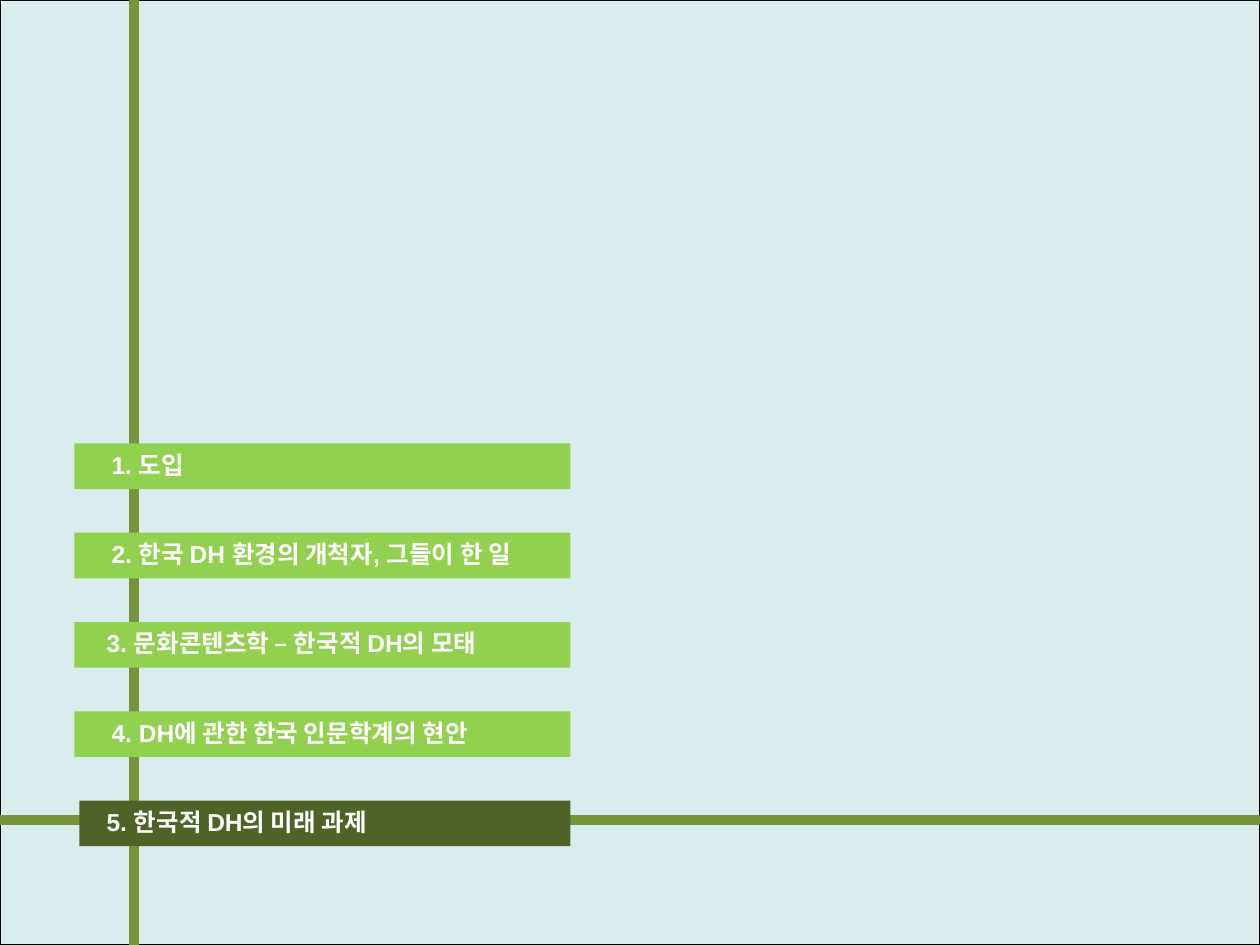
from lxml import etree
from pptx import Presentation
from pptx.dml.color import RGBColor
from pptx.enum import shapes as sh, text as tx
from pptx.oxml.ns import qn
from pptx.util import Cm, Pt

SKY = RGBColor(0xD9, 0xED, 0xEF)
BLACK = RGBColor(0, 0, 0)
OLIVE = RGBColor(0x77, 0x93, 0x3C)
LIME = RGBColor(0x92, 0xD0, 0x50)
DARK = RGBColor(0x4F, 0x62, 0x28)
WHITE = RGBColor(0xFF, 0xFF, 0xFF)

WIDE, HIGH = 25.4, 19.05
TOP, STEP = 8.94, 1.8
RIGHT = 11.5
BAR, LABEL = 0.92, 0.86

ITEMS = [
    ("1. 도입", 1.5, 2.0, LIME),
    ("2. 한국 DH 환경의 개척자, 그들이 한 일", 1.5, 2.0, LIME),
    ("3. 문화콘텐츠학 – 한국적 DH의 모태", 1.5, 1.9, LIME),
    ("4. DH에 관한 한국 인문학계의 현안", 1.5, 2.0, LIME),
    ("5. 한국적 DH의 미래 과제", 1.6, 1.9, DARK),
]


def add_rect(slide, x, y, w, h, fill, edge=None):
    rect = slide.shapes.add_shape(
        sh.MSO_SHAPE.RECTANGLE, Cm(x), Cm(y), Cm(w), Cm(h))
    rect.shadow.inherit = False
    rect.fill.solid()
    rect.fill.fore_color.rgb = fill
    if edge is None:
        rect.line.fill.background()
    else:
        rect.line.color.rgb = edge
        rect.line.width = Pt(0.75)


def add_line(slide, x1, y1, x2, y2):
    line = slide.shapes.add_connector(
        sh.MSO_CONNECTOR.STRAIGHT, Cm(x1), Cm(y1), Cm(x2), Cm(y2))
    line.line.color.rgb = OLIVE
    line.line.width = Pt(6)
    etree.SubElement(line._element.spPr, qn("a:effectLst"))


def add_label(slide, x, y, words):
    box = slide.shapes.add_textbox(Cm(x), Cm(y), Cm(RIGHT - x), Cm(LABEL))
    frame = box.text_frame
    frame.word_wrap = True
    frame.auto_size = tx.MSO_AUTO_SIZE.SHAPE_TO_FIT_TEXT
    run = frame.paragraphs[0].add_run()
    run.text = words
    run.font.name = "Arial"
    run.font.size = Pt(14)
    run.font.bold = True
    run.font.color.rgb = WHITE


def main():
    deck = Presentation()
    deck.slide_width, deck.slide_height = Cm(WIDE), Cm(HIGH)
    slide = deck.slides.add_slide(deck.slide_layouts[6])
    add_rect(slide, 0, 0, WIDE, HIGH, SKY, BLACK)
    add_line(slide, 2.7, HIGH, 2.7, 0)
    add_line(slide, 0, 16.53, WIDE, 16.53)
    for i, (words, left, inset, fill) in enumerate(ITEMS):
        y = TOP + i * STEP
        add_rect(slide, left, y, RIGHT - left, BAR, fill)
        add_label(slide, inset, y, words)
    deck.save("out.pptx")


if __name__ == "__main__":
    main()
